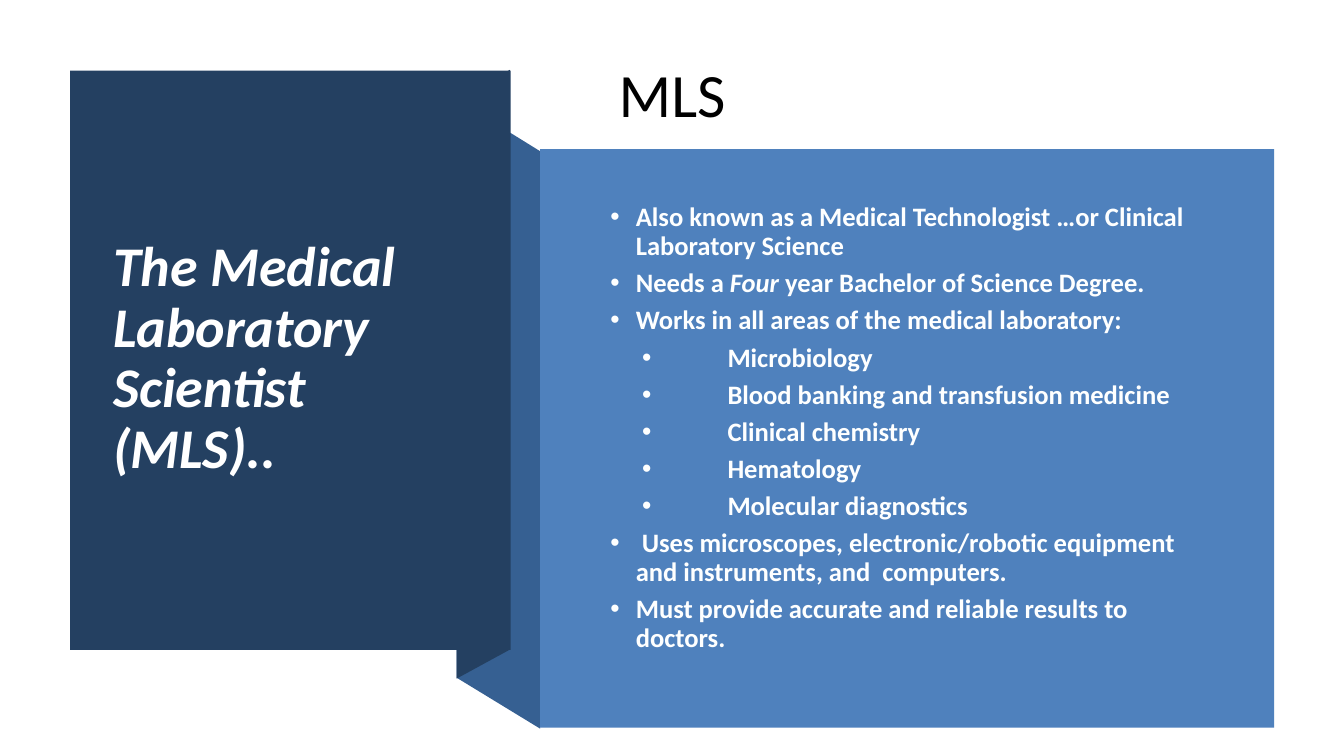
from lxml import etree
from pptx import Presentation
from pptx.dml.color import RGBColor
from pptx.enum.shapes import MSO_SHAPE
from pptx.enum.text import MSO_ANCHOR, MSO_AUTO_SIZE, PP_ALIGN
from pptx.oxml.ns import qn
from pptx.util import Cm, Pt

RECT = MSO_SHAPE.RECTANGLE
MIDDLE = MSO_ANCHOR.MIDDLE
NO_FIT = MSO_AUTO_SIZE.NONE
LEFT, CENTER = PP_ALIGN.LEFT, PP_ALIGN.CENTER

BLACK = RGBColor(0x00, 0x00, 0x00)
WHITE = RGBColor(0xFF, 0xFF, 0xFF)
OFF_WHITE = RGBColor(0xFE, 0xFF, 0xFF)
NAVY = RGBColor(0x24, 0x40, 0x61)
MID_BLUE = RGBColor(0x36, 0x60, 0x92)
BLUE = RGBColor(0x4F, 0x81, 0xBD)

TITLE = "MLS"
HEADING = "The Medical Laboratory Scientist (MLS).."
BULLETS = [
    (0, ["Also known as a Medical Technologist …or Clinical Laboratory Science"]),
    (0, ["Needs a ", "Four", " year Bachelor of Science Degree."]),
    (0, ["Works in all areas of the medical laboratory:"]),
    (1, ["Microbiology"]),
    (1, ["Blood banking and transfusion medicine"]),
    (1, ["Clinical chemistry"]),
    (1, ["Hematology"]),
    (1, ["Molecular diagnostics"]),
    (0, [" Uses microscopes, electronic/robotic equipment and instruments, and  computers."]),
    (0, ["Must provide accurate and reliable results to doctors."]),
]
ITALIC_WORDS = {"Four"}
INDENTS = [(1.27, -0.64), (3.58, -2.15)]

TITLE_BOX = (1.7, 0.75, 30.48, 3.18)
HEADING_BOX = (2.6, 2.72, 9.42, 12.67)
BODY_BOX = (14.5, 4.78, 16.54, 12.04)
FOLDS = [
    ([(13.61, 18.36), (11.51, 17.08), (11.51, 2.51), (13.61, 3.81)], MID_BLUE),
    ([(12.85, 16.37), (11.51, 17.1), (11.51, 2.49), (12.85, 1.76)], NAVY),
]
BLOCKS = [
    ((1.77, 1.78, 11.1, 14.6), NAVY),
    ((13.61, 3.76, 18.5, 14.58), BLUE),
]

TITLE_FONT = {"name": "Calibri", "size": Pt(44), "bold": False}
HEADING_FONT = {"name": "Calibri", "size": Pt(40), "bold": True, "italic": True}
BODY_FONT = {"name": "Calibri", "size": Pt(19), "bold": True}


def place(sp, box):
    for name, value in zip(("left", "top", "width", "height"), box):
        setattr(sp, name, Cm(value))


def paint(sp, color):
    sp.shadow.inherit = False
    sp.fill.solid()
    sp.fill.fore_color.rgb = color
    sp.line.fill.background()


def prepare(tf):
    for name, value in {"word_wrap": True, "auto_size": NO_FIT, "vertical_anchor": MIDDLE}.items():
        setattr(tf, name, value)


def add_run(p, text, font, color):
    r = p.add_run()
    r.text = text
    for name, value in font.items():
        setattr(r.font, name, value)
    r.font.color.rgb = color
    return r


def add_bullet(p, level):
    p.level = level
    pPr = p._p.get_or_add_pPr()
    for name, value in zip(("marL", "indent"), INDENTS[level]):
        pPr.set(name, str(int(Cm(value))))
    color = etree.SubElement(pPr, qn("a:buClr"))
    etree.SubElement(color, qn("a:srgbClr"), val=str(OFF_WHITE))
    etree.SubElement(pPr, qn("a:buFont"), typeface="Arial")
    etree.SubElement(pPr, qn("a:buChar"), char="•")


def main():
    prs = Presentation()
    prs.slide_width, prs.slide_height = Cm(33.87), Cm(19.05)
    slide = prs.slides.add_slide(prs.slide_layouts[1])
    shapes = slide.shapes

    title = shapes.title
    place(title, TITLE_BOX)
    prepare(title.text_frame)
    p = title.text_frame.paragraphs[0]
    p.alignment = CENTER
    add_run(p, TITLE, TITLE_FONT, BLACK)

    for points, color in FOLDS:
        corners = [(Cm(x), Cm(y)) for x, y in points]
        outline = shapes.build_freeform(*corners[0])
        outline.add_line_segments(corners[1:], close=True)
        paint(outline.convert_to_shape(), color)

    for box, color in BLOCKS:
        paint(shapes.add_shape(RECT, *map(Cm, box)), color)

    heading = shapes.add_textbox(*map(Cm, HEADING_BOX))
    prepare(heading.text_frame)
    p = heading.text_frame.paragraphs[0]
    p.line_spacing = 0.9
    add_run(p, HEADING, HEADING_FONT, WHITE)

    body = slide.placeholders[1]
    place(body, BODY_BOX)
    shapes._spTree.append(body._element)
    tf = body.text_frame
    prepare(tf)
    for i, (level, parts) in enumerate(BULLETS):
        p = tf.add_paragraph() if i else tf.paragraphs[0]
        p.alignment = LEFT
        p.line_spacing = 0.9
        p.space_before = Pt(6 if i else 0)
        add_bullet(p, level)
        for part in parts:
            add_run(p, part, BODY_FONT, OFF_WHITE).font.italic = part in ITALIC_WORDS

    prs.save("out.pptx")


if __name__ == "__main__":
    main()
